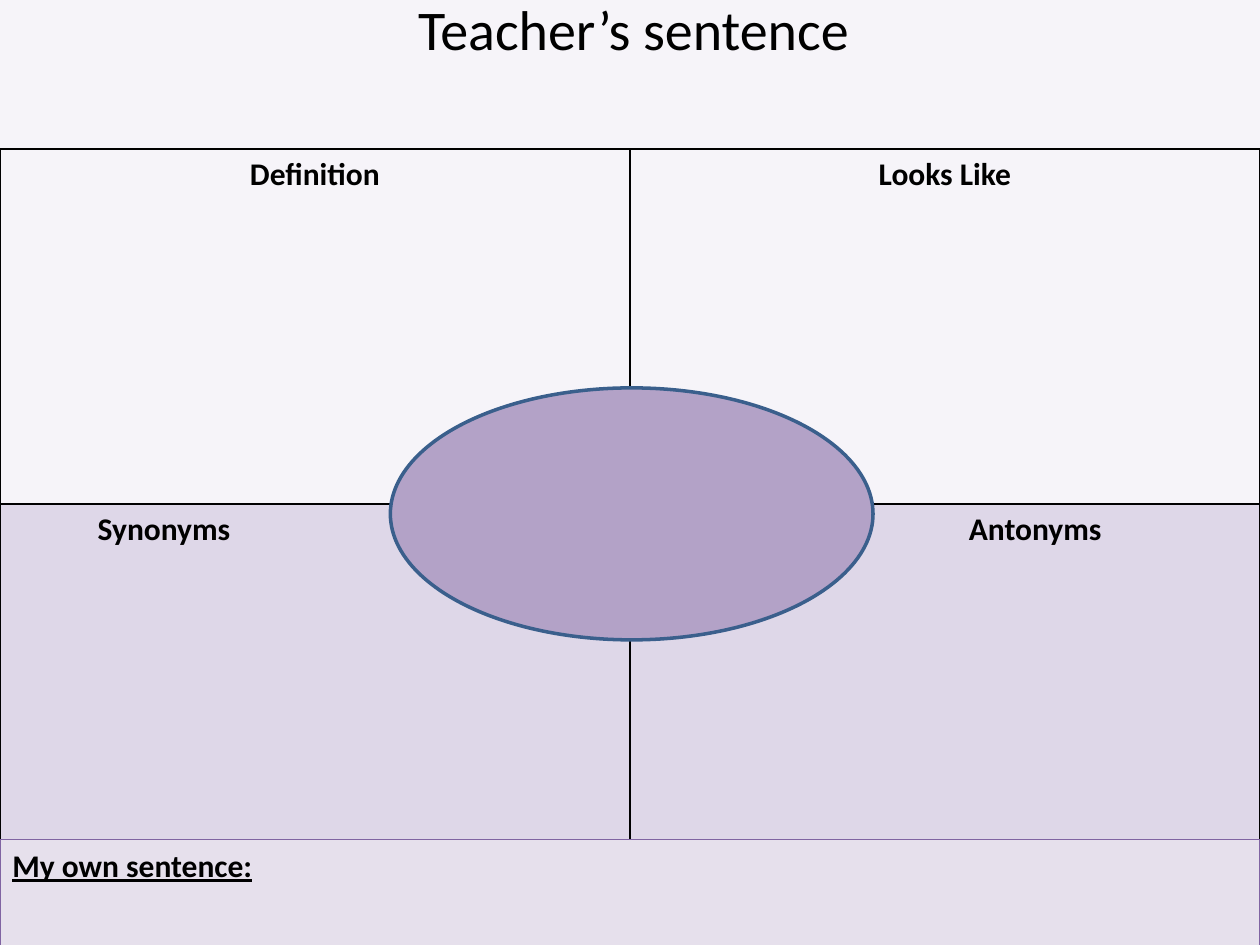
from dataclasses import dataclass

from lxml.etree import SubElement
from pptx import Presentation
from pptx.dml.color import RGBColor
from pptx.enum.shapes import MSO_SHAPE as Shape
from pptx.enum.text import MSO_ANCHOR as Anchor, PP_ALIGN as Align
from pptx.oxml.ns import qn
from pptx.util import Cm, Pt


@dataclass(frozen=True)
class Theme:
    font: str = "Calibri"
    ink: str = "000000"
    background: str = "F6F4F9"
    lower_cell: str = "DED7E8"
    sentence_fill: str = "E6E0EC"
    sentence_line: str = "8064A2"
    word_fill: str = "B3A2C7"
    word_line: str = "3A5F8C"
    title_size: int = 32
    label_size: int = 18


theme = Theme()


def write(frame, text, size, align=Align.LEFT, bold=False):
    paragraph = frame.paragraphs[0]
    paragraph.text = text
    paragraph.alignment = align
    font = paragraph.font
    font.name, font.size, font.bold = theme.font, Pt(size), bold
    font.color.rgb = RGBColor.from_string(theme.ink)
    return paragraph


def add_panel(kind, box, fill, line, width):
    shape = slide.shapes.add_shape(kind, *map(Cm, box))
    shape.shadow.inherit = False
    shape.fill.solid()
    shape.fill.fore_color.rgb = RGBColor.from_string(fill)
    shape.line.color.rgb = RGBColor.from_string(line)
    shape.line.width = Pt(width)
    return shape


presentation = Presentation()
presentation.slide_width, presentation.slide_height = Cm(25.4), Cm(19.05)
slide = presentation.slides.add_slide(presentation.slide_layouts[6])
slide.background.fill.solid()
slide.background.fill.fore_color.rgb = RGBColor.from_string(theme.background)

table = slide.shapes.add_table(2, 2, Cm(0), Cm(3), Cm(25.4), Cm(15.09)).table
table.first_row = table.horz_banding = False
table.rows[0].height, table.rows[1].height = Cm(7.16), Cm(7.93)

quadrants = [
    [("Definition", Align.CENTER, 0.25), ("Looks Like", Align.CENTER, 0.25)],
    [("Synonyms", Align.LEFT, 1.97), ("Antonyms", Align.LEFT, 6.83)],
]
for row, labels in enumerate(quadrants):
    for column, (label, align, margin) in enumerate(labels):
        cell = table.cell(row, column)
        cell.margin_left = Cm(margin)
        write(cell.text_frame, label, theme.label_size, align, bold=True)
        properties = cell._tc.get_or_add_tcPr()
        for side in ("a:lnL", "a:lnR", "a:lnT", "a:lnB"):
            border = SubElement(properties, qn(side), w=str(Pt(1)))
            border_fill = SubElement(border, qn("a:solidFill"))
            SubElement(border_fill, qn("a:srgbClr"), val=theme.ink)
        if row == 0:
            cell.fill.background()
        else:
            cell.fill.solid()
            cell.fill.fore_color.rgb = RGBColor.from_string(theme.lower_cell)

title = slide.shapes.add_textbox(Cm(0.81), Cm(-0.23), Cm(23.93), Cm(1.63))
title.text_frame.word_wrap = True
write(title.text_frame, "Teacher’s sentence", theme.title_size, Align.CENTER)

sentence = add_panel(Shape.RECTANGLE, (0, 16.93, 25.4, 2.57),
                     theme.sentence_fill, theme.sentence_line, 0.75)
sentence.text_frame.word_wrap = True
sentence.text_frame.vertical_anchor = Anchor.TOP
paragraph = write(sentence.text_frame, "My own sentence:", theme.label_size, bold=True)
paragraph.font.underline = True

add_panel(Shape.OVAL, (7.87, 7.82, 9.73, 5.08), theme.word_fill, theme.word_line, 2)

presentation.save("out.pptx")
